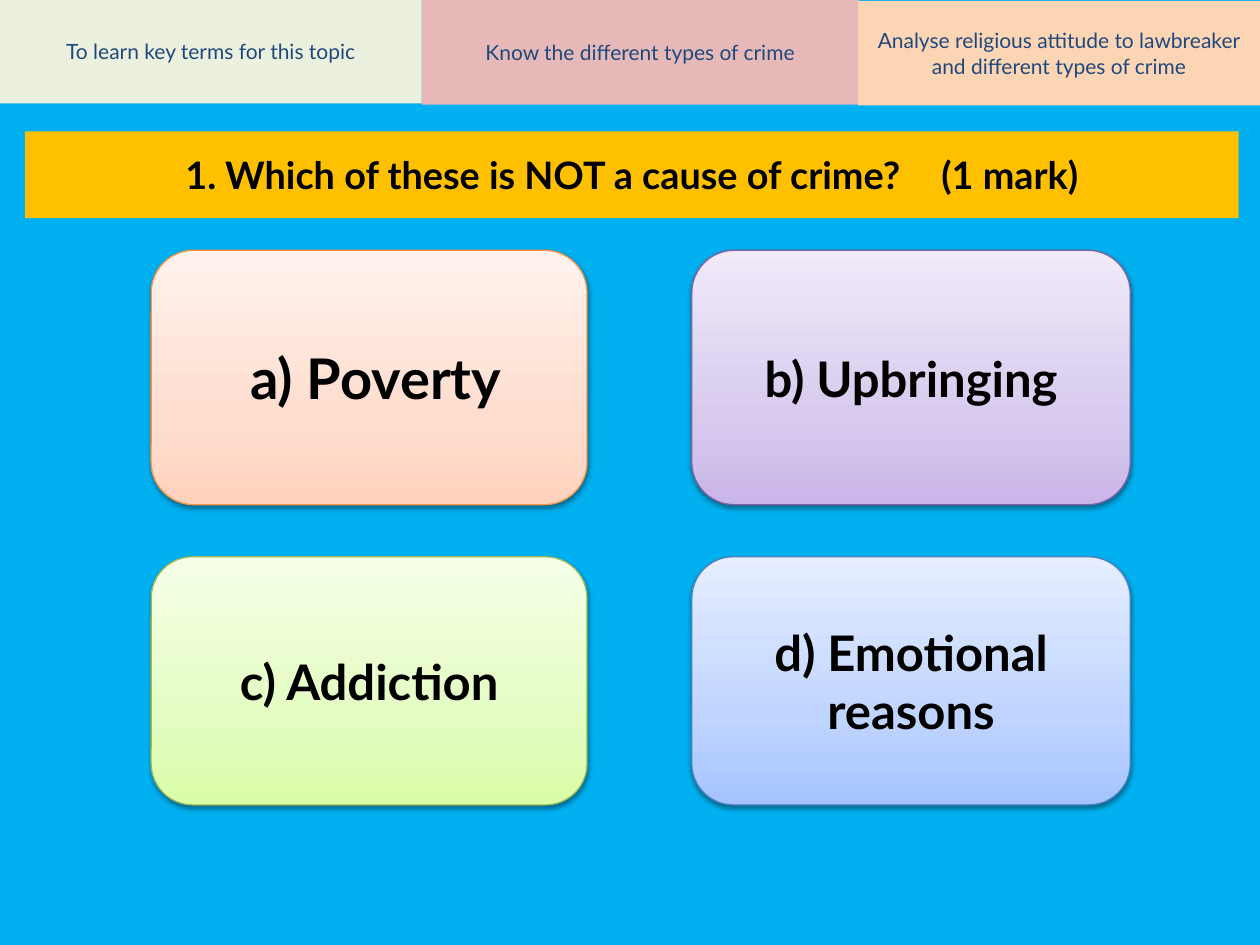
from copy import deepcopy
from lxml import etree
from pptx import Presentation
from pptx.dml.color import RGBColor
from pptx.enum import shapes, text
from pptx.oxml import ns
from pptx.util import Pt

COLOURS = {
    "background": "00B0F0", "banner": "FFC000", "black": "000000", "navy": "1F497D",
    "green": "EBF1DE", "pink": "E6B9B8", "peach": "FCD5B5",
}
ANSWER_COLOURS = {
    "orange": ("F69240", "FFD2BD", "FFDED0", "FFF2ED"),
    "purple": ("7D60A0", "C9B5E8", "D8CBEE", "F0EAF9"),
    "lime": ("98B955", "DAFDA7", "E4FCC2", "F5FFE7"),
    "blue": ("4B7EBC", "A4C4FF", "BFD4FF", "E6EEFF"),
}

presentation = Presentation()
presentation.slide_width, presentation.slide_height = Pt(720), Pt(540)
slide = presentation.slides.add_slide(presentation.slide_layouts[6])
slide.background.fill.solid()
slide.background.fill.fore_color.rgb = RGBColor.from_string(COLOURS["background"])


def add_box(wording, left, top, width, height, kind="RECTANGLE", fill=None,
            size=12, colour="black", bold=False):
    shape = slide.shapes.add_shape(
        shapes.MSO_SHAPE[kind], Pt(left), Pt(top), Pt(width), Pt(height))
    shape.shadow.inherit = False
    shape.line.fill.background()
    if fill:
        shape.fill.solid()
        shape.fill.fore_color.rgb = RGBColor.from_string(COLOURS[fill])
    frame = shape.text_frame
    frame.word_wrap = True
    frame.vertical_anchor = text.MSO_ANCHOR.MIDDLE
    paragraph = frame.paragraphs[0]
    paragraph.alignment = text.PP_ALIGN.CENTER
    run = paragraph.add_run()
    run.text = wording
    run.font.name = "Lato"
    run.font.size = Pt(size)
    run.font.bold = bold
    run.font.color.rgb = RGBColor.from_string(COLOURS[colour])
    return shape


def style_answer(shape, line_colour, *stop_colours):
    shape.line.color.rgb = RGBColor.from_string(line_colour)
    shape.line.width = Pt(0.75)
    shape.fill.gradient()
    shape.fill.gradient_angle = 90
    properties = shape.element.spPr
    stop_list = properties.find(".//" + ns.qn("a:gsLst"))
    stop_list.insert(1, deepcopy(stop_list[0]))
    for stop, position, colour in zip(shape.fill.gradient_stops, (0, 0.35, 1), stop_colours):
        stop.position = position
        stop.color.rgb = RGBColor.from_string(colour)
    shadow = etree.SubElement(
        properties.find(ns.qn("a:effectLst")), ns.qn("a:outerShdw"),
        blurRad=str(Pt(3.1)), dist=str(Pt(1.6)), dir="5400000", rotWithShape="0")
    colour = etree.SubElement(shadow, ns.qn("a:srgbClr"), val=COLOURS["black"])
    etree.SubElement(colour, ns.qn("a:alpha"), val="38000")


add_box("1. Which of these is NOT a cause of crime?\t(1 mark)",
        14.4, 75, 693.4, 49.7, fill="banner", size=21.6, bold=True)

objectives = [
    ("Know the different types of crime", 241, 0, 249.8, "pink"),
    ("Analyse religious attitude to lawbreaker and different types of crime",
     490.3, 0.5, 229.7, "peach"),
    ("To learn key terms for this topic", 0, -0.7, 241, "green"),
]
for wording, left, top, width, fill in objectives:
    add_box(wording, left, top, width, 59.8, fill=fill, colour="navy")

columns = [(86.4, 249.1), (395.3, 250.6)]
rows = [(143, 145.4), (318.2, 141.8)]
answers = [
    (" a) Poverty", 0, 0, 32, "orange"),
    ("d) Emotional reasons", 1, 1, 28, "blue"),
    ("c) Addiction", 0, 1, 28, "lime"),
    ("b) Upbringing", 1, 0, 28, "purple"),
]
for wording, column, row, size, palette in answers:
    left, width = columns[column]
    top, height = rows[row]
    answer = add_box(wording, left, top, width, height,
                     kind="ROUNDED_RECTANGLE", size=size, bold=True)
    style_answer(answer, *ANSWER_COLOURS[palette])

presentation.save("out.pptx")
